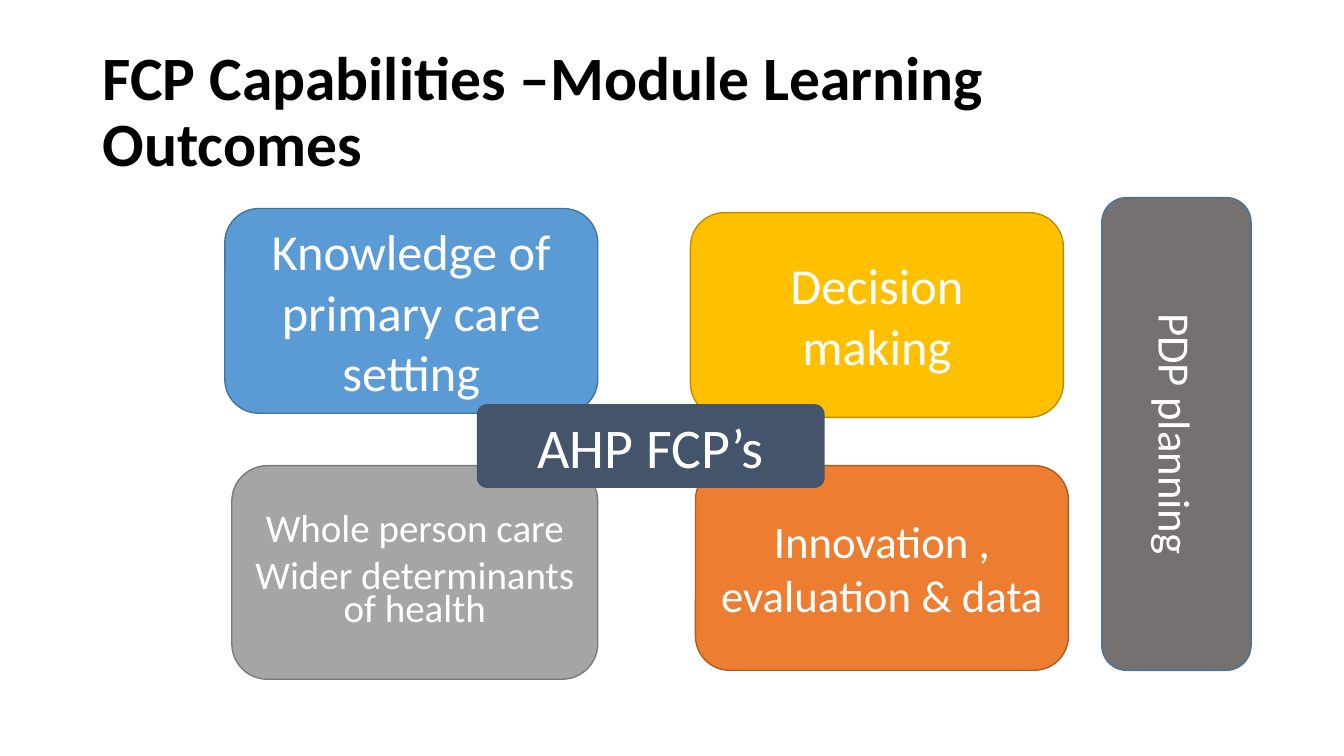
from pptx import Presentation
from pptx.dml.color import RGBColor
from pptx.enum.shapes import MSO_SHAPE
from pptx.enum.text import MSO_ANCHOR, MSO_AUTO_SIZE, PP_ALIGN
from pptx.util import Pt

BLACK = RGBColor(0x00, 0x00, 0x00)
WHITE = RGBColor(0xFF, 0xFF, 0xFF)
BLUE = RGBColor(0x5B, 0x9B, 0xD5)
BLUE_EDGE = RGBColor(0x43, 0x73, 0x9E)
GOLD = RGBColor(0xFF, 0xC0, 0x00)
GOLD_EDGE = RGBColor(0xBD, 0x8E, 0x00)
GREY = RGBColor(0xA5, 0xA5, 0xA5)
GREY_EDGE = RGBColor(0x7A, 0x7A, 0x7A)
ORANGE = RGBColor(0xED, 0x7D, 0x31)
ORANGE_EDGE = RGBColor(0xAF, 0x5C, 0x24)
NAVY = RGBColor(0x44, 0x54, 0x6A)
STONE = RGBColor(0x76, 0x71, 0x71)


def set_attrs(obj, values):
    for name, value in values.items():
        setattr(obj, name, value)


def write_text(tf, lines, font, para):
    set_attrs(tf, {"word_wrap": True, "vertical_anchor": MSO_ANCHOR.MIDDLE,
                   "auto_size": MSO_AUTO_SIZE.NONE})
    for i, line in enumerate(lines):
        p = tf.paragraphs[0] if i == 0 else tf.add_paragraph()
        set_attrs(p, para)
        r = p.add_run()
        r.text = line
        set_attrs(r.font, {"name": "Calibri", **font["attrs"]})
        r.font.color.rgb = font["color"]


def add_title(s, box, text):
    title = s.shapes.title
    set_attrs(title, dict(zip(("left", "top", "width", "height"), map(Pt, box))))
    write_text(title.text_frame, [text],
               {"attrs": {"size": Pt(44), "bold": True}, "color": BLACK},
               {"alignment": PP_ALIGN.LEFT, "line_spacing": 0.9})


def add_card(s, box, lines, size, fill, edge=None, para=None):
    sp = s.shapes.add_shape(MSO_SHAPE.ROUNDED_RECTANGLE, *map(Pt, box))
    sp.shadow.inherit = False
    sp.fill.solid()
    sp.fill.fore_color.rgb = fill
    if edge is None:
        sp.line.fill.background()
    else:
        sp.line.color.rgb = edge
        sp.line.width = Pt(1)
    write_text(sp.text_frame, lines,
               {"attrs": {"size": Pt(size)}, "color": WHITE},
               {"alignment": PP_ALIGN.CENTER, **(para or {})})
    return sp


def add_capabilities(s, box):
    x, y, w, h = box
    card_w, card_h = 266.4, 146.2
    right, lower = x + 332.6, y + h - card_h
    add_card(s, (x + 5, lower, card_w - 5, card_h + 6.4),
             ["Whole person care", "Wider determinants of health"], 27.9,
             GREY, GREY_EDGE, {"line_spacing": 0.7, "space_before": Pt(10)})
    add_card(s, (x, y, card_w, card_h),
             ["Knowledge of primary care setting"], 36, BLUE, BLUE_EDGE)
    add_card(s, (right, y + 2.9, card_w, card_h),
             ["Decision making"], 36, GOLD, GOLD_EDGE)
    add_card(s, (x + w - card_w, lower, card_w, card_h),
             ["Innovation , evaluation & data"], 32, ORANGE, ORANGE_EDGE)
    hub = add_card(s, (x + 180, y + 139.7, 248.4, 59.8), ["AHP FCP’s"], 40, NAVY)
    hub.adjustments[0] = 0.12


def add_planning_bar(s, box):
    bar = add_card(s, box, ["PDP planning"], 32, STONE, BLUE_EDGE)
    bar.text_frame._txBody.bodyPr.set("vert", "vert")


def main():
    prs = Presentation()
    prs.slide_width, prs.slide_height = Pt(960), Pt(540)
    s = prs.slides.add_slide(prs.slide_layouts[5])
    add_title(s, (66, 28.8, 828, 104.4), "FCP Capabilities –Module Learning Outcomes")
    add_capabilities(s, (160.6, 149, 602.6, 329.8))
    add_planning_bar(s, (787, 141.1, 106.6, 337.7))
    prs.save("out.pptx")


if __name__ == "__main__":
    main()
